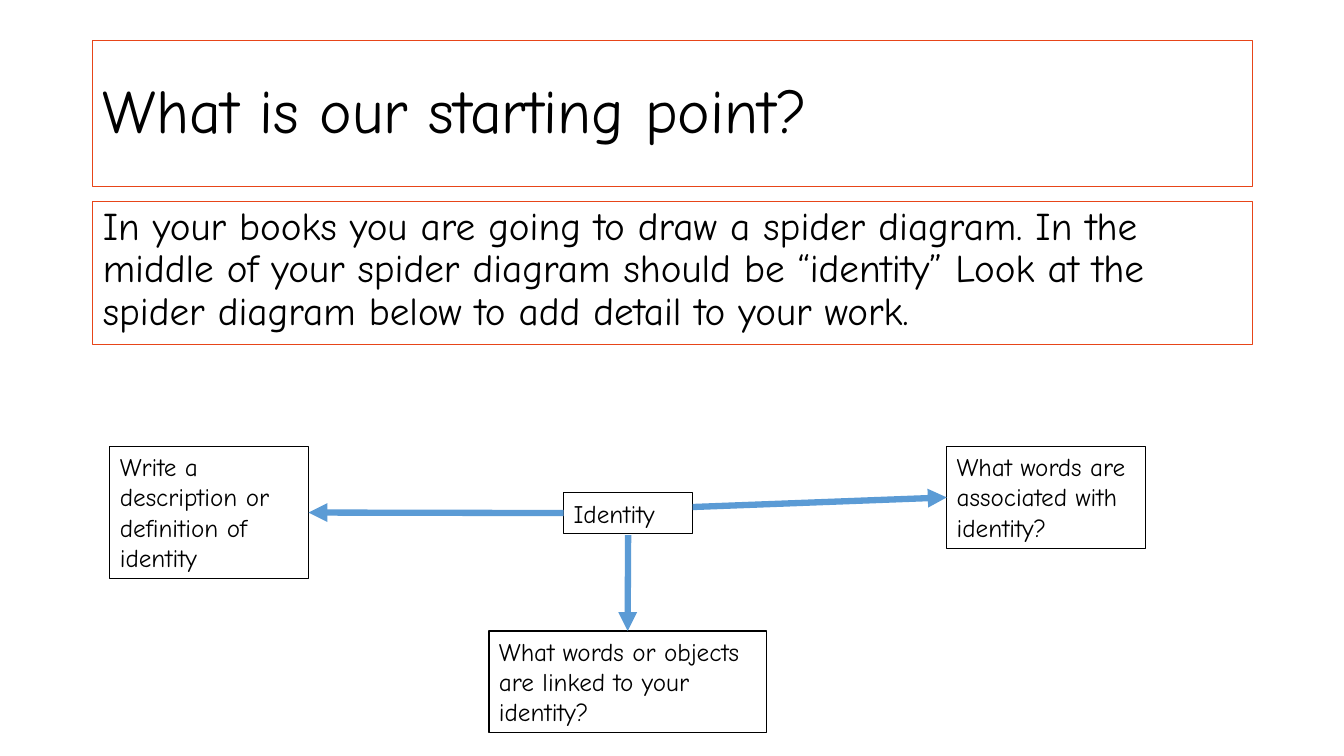
"""Build a lesson slide with a spider diagram about identity."""
from dataclasses import dataclass
from typing import Optional

from lxml import etree
from pptx import Presentation
from pptx.dml.color import RGBColor
from pptx.enum.shapes import MSO_CONNECTOR
from pptx.enum.text import MSO_ANCHOR, MSO_AUTO_SIZE, PP_ALIGN
from pptx.oxml.ns import qn
from pptx.util import Inches, Pt

STRAIGHT = MSO_CONNECTOR.STRAIGHT
TOP, MIDDLE = MSO_ANCHOR.TOP, MSO_ANCHOR.MIDDLE
NO_FIT, GROW = MSO_AUTO_SIZE.NONE, MSO_AUTO_SIZE.SHAPE_TO_FIT_TEXT
LEFT = PP_ALIGN.LEFT
TOP_SIDE, LEFT_SIDE, RIGHT_SIDE = 0, 1, 3


@dataclass(frozen=True)
class Theme:
    """Colours, font and sizes of the slide."""
    font: str = "Comic Neue"
    ink: str = "000000"
    frame: str = "E74519"
    arrow: str = "5B9BD5"
    title: float = 44
    body: float = 28
    label: float = 18
    thin: float = 0.75
    thick: float = 4.5


@dataclass(frozen=True)
class Box:
    """A framed text, measured in inches."""
    text: str
    x: float
    y: float
    w: float
    h: float


@dataclass(frozen=True)
class Branch:
    """A box with the arrow that leads to it."""
    box: Box
    start: tuple[float, float]
    end_side: int
    start_side: Optional[int] = None


THEME = Theme()
TITLE = Box("What is our starting point?", 0.92, 0.4, 11.5, 1.45)
TASK = Box("In your books you are going to draw a spider diagram. In the middle of "
           "your spider diagram should be “identity” Look at the spider diagram "
           "below to add detail to your work.", 0.92, 2, 11.5, 1.42)
HUB = Box("Identity", 5.59, 4.89, 1.28, 0.4)
BRANCHES = (
    Branch(Box("Write a description or definition of identity", 1.09, 4.43, 1.97, 1.31),
           (5.59, 5.09), RIGHT_SIDE, LEFT_SIDE),
    Branch(Box("What words or objects are linked to your identity?", 4.85, 6.26, 2.75, 1.01),
           (6.23, 5.31), TOP_SIDE),
    Branch(Box("What words are associated with identity?", 9.39, 4.43, 1.97, 1.01),
           (6.87, 5.03), LEFT_SIDE),
)


def write_text(s, text: str, *, size: float, anchor=TOP, fit=NO_FIT,
               spacing: float = 1.0, before: float = 0) -> None:
    """Put one formatted paragraph into a shape."""
    tf = s.text_frame
    tf.word_wrap = True
    tf.auto_size = fit
    tf.vertical_anchor = anchor
    p = tf.paragraphs[0]
    p.alignment = LEFT
    p.line_spacing = spacing
    p.space_before = Pt(before)
    r = p.add_run()
    r.text = text
    r.font.name = THEME.font
    r.font.size = Pt(size)
    r.font.color.rgb = RGBColor.from_string(THEME.ink)


def set_line(s, color: str, width: float) -> None:
    """Give a shape or connector its line."""
    s.line.color.rgb = RGBColor.from_string(color)
    s.line.width = Pt(width)


def fill_placeholder(s, box: Box, **text_format) -> None:
    """Move, frame and fill a placeholder."""
    s.left, s.top = Inches(box.x), Inches(box.y)
    s.width, s.height = Inches(box.w), Inches(box.h)
    set_line(s, THEME.frame, THEME.thin)
    write_text(s, box.text, spacing=0.9, **text_format)


def remove_bullet(s) -> None:
    """Drop the bullet and indent of the first paragraph."""
    pPr = s.text_frame.paragraphs[0]._p.get_or_add_pPr()
    pPr.set("marL", "0")
    pPr.set("indent", "0")
    etree.SubElement(pPr, qn("a:buNone"))


def add_box(shapes, box: Box):
    """Add a framed text box of the diagram."""
    s = shapes.add_textbox(Inches(box.x), Inches(box.y), Inches(box.w), Inches(box.h))
    set_line(s, THEME.ink, THEME.thin)
    write_text(s, box.text, size=THEME.label, fit=GROW)
    return s


def add_arrow(shapes, branch: Branch, hub, target) -> None:
    """Draw the arrow from the hub to a branch box."""
    x, y = map(Inches, branch.start)
    s = shapes.add_connector(STRAIGHT, x, y, x, y)
    if branch.start_side is not None:
        s.begin_connect(hub, branch.start_side)
    s.end_connect(target, branch.end_side)
    set_line(s, THEME.arrow, THEME.thick)
    etree.SubElement(s.line._get_or_add_ln(), qn("a:tailEnd"), type="triangle")
    etree.SubElement(s._element.spPr, qn("a:effectLst"))


def main() -> None:
    """Build and save the slide."""
    prs = Presentation()
    prs.slide_width, prs.slide_height = Inches(13.33), Inches(7.5)
    slide = prs.slides.add_slide(prs.slide_layouts[1])
    shapes = slide.shapes
    fill_placeholder(shapes.title, TITLE, size=THEME.title, anchor=MIDDLE)
    body = slide.placeholders[1]
    fill_placeholder(body, TASK, size=THEME.body, before=10)
    remove_bullet(body)
    hub = add_box(shapes, HUB)
    targets = [add_box(shapes, branch.box) for branch in BRANCHES]
    for branch, target in zip(BRANCHES, targets):
        add_arrow(shapes, branch, hub, target)
    prs.save("out.pptx")


if __name__ == "__main__":
    main()
